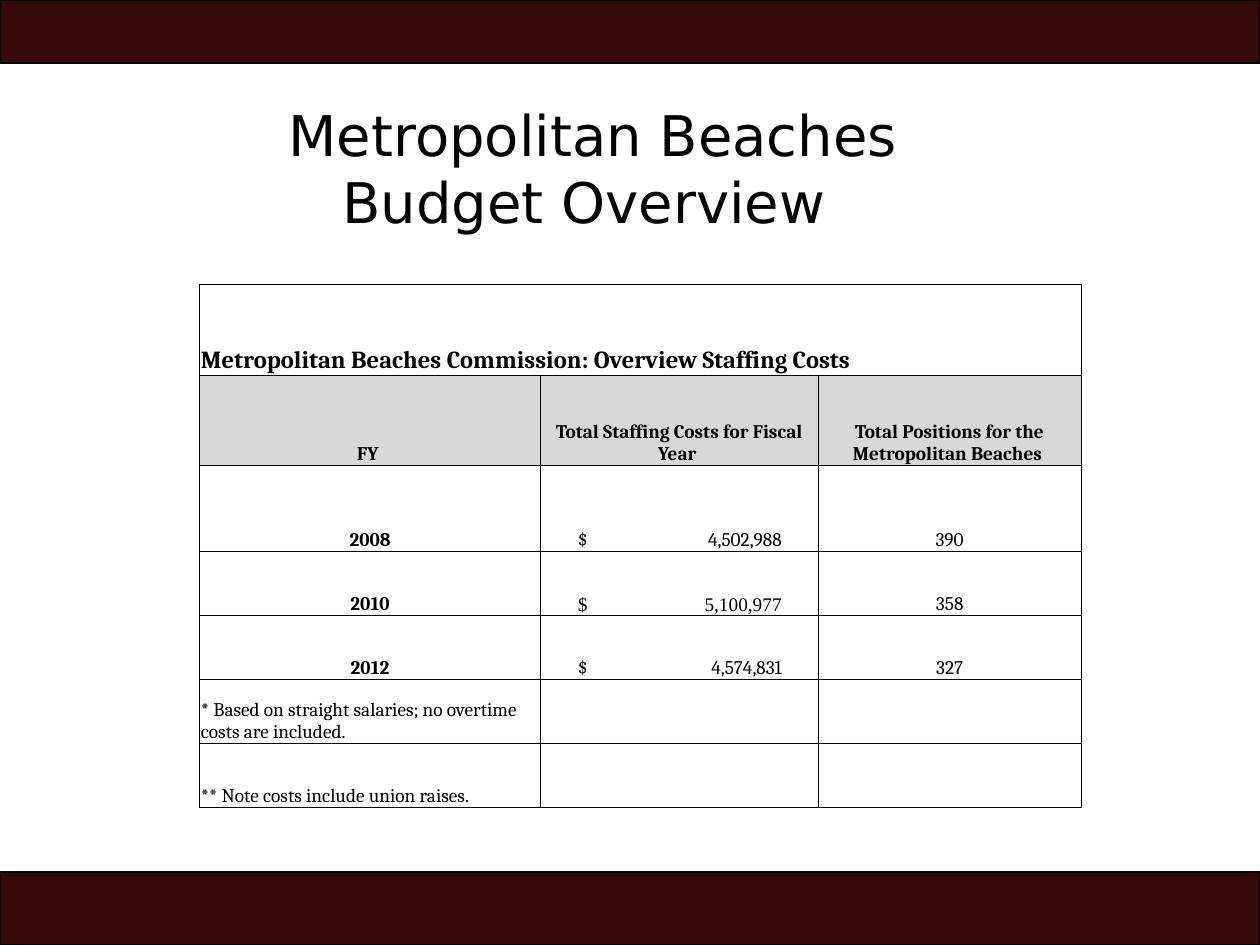
from typing import Any, NamedTuple

import pptx
import pptx.dml.color
import pptx.enum.shapes
import pptx.enum.text
import pptx.oxml
import pptx.oxml.ns
import pptx.util
from pptx.util import Cm

RGBColor = pptx.dml.color.RGBColor
BLACK = RGBColor(0, 0, 0)
WHITE = RGBColor(255, 255, 255)
GREY = RGBColor(0xD8, 0xD8, 0xD8)
MAROON = RGBColor(0x37, 0x0A, 0x0A)
ALIGN = pptx.enum.text.PP_ALIGN
ANCHOR = pptx.enum.text.MSO_ANCHOR
SIDES = ("L", "R", "T", "B")
SERIF = "Cambria"


class Bar(NamedTuple):
    top: float
    height: float


class Item(NamedTuple):
    text: str = ""
    align: Any = ALIGN.CENTER
    bold: bool = False
    size: float = 11
    font: str = SERIF
    tabs: tuple = ()


def money(text: str, font: str = SERIF) -> Item:
    """Dollar sign at a left tab, amount against a right tab."""
    return Item(f"\t$\t{text}", ALIGN.LEFT, font=font, tabs=(("l", 0.72), ("r", 4.83)))


def head(text: str) -> Item:
    return Item(text, bold=True)


def year(text: str, cost: Item, staff: str) -> list[Item]:
    return [head(text), cost, Item(staff)]


def note(text: str) -> list[Item]:
    return [Item(text, ALIGN.LEFT), Item(), Item()]


BARS = [Bar(0, 1.27), Bar(17.58, 1.47)]
COLS = [6.88, 5.59, 5.31]
ROWS = [1.29, 1.82, 1.82, 1.74] + [1.29] * 4
CELLS = [
    [Item()],
    [Item("Metropolitan Beaches Commission: Overview Staffing Costs", ALIGN.LEFT, True, 14)],
    [
        head("FY "),
        head("Total Staffing Costs for Fiscal Year "),
        head("Total Positions for the Metropolitan Beaches "),
    ],
    year("2008", money("4,502,988"), "390"),
    year("2010", money("5,100,977", "Times New Roman"), "358"),
    year("2012", money("4,574,831"), "327"),
    note("* Based on straight salaries; no overtime costs are included."),
    note("** Note costs include union raises."),
]


def style(obj: Any, form: dict[str, Any]) -> None:
    for key, value in form.items():
        setattr(obj, key, value)


def write(para: Any, item: Item) -> None:
    if item.tabs:
        props = para._p.get_or_add_pPr()
        stops = pptx.oxml.ns.qn("a:tabLst")
        stops = props.makeelement(stops, {})
        props.append(stops)
        for side, place in item.tabs:
            stop = {"pos": str(Cm(place)), "algn": side}
            stops.append(stops.makeelement(pptx.oxml.ns.qn("a:tab"), stop))
    para.alignment = item.align
    if item.text:
        run = para.add_run()
        run.text = item.text
        form = {"name": item.font, "size": pptx.util.Pt(item.size), "bold": item.bold}
        style(run.font, form)
        run.font.color.rgb = BLACK


def border(cell: Any, shown: tuple[str, ...]) -> None:
    """Draw the named sides and clear the others."""
    props = cell._tc.get_or_add_tcPr()
    for side in SIDES:
        paint = (
            f'<a:solidFill><a:srgbClr val="{BLACK}"/></a:solidFill>'
            if side in shown
            else "<a:noFill/>"
        )
        props.append(
            pptx.oxml.parse_xml(
                f'<a:ln{side} {pptx.oxml.ns.nsdecls("a")} w="{pptx.util.Pt(0.5)}">{paint}</a:ln{side}>'
            )
        )


def band(slide: Any, bar: Bar) -> None:
    kind = pptx.enum.shapes.MSO_SHAPE.RECTANGLE
    shape = slide.shapes.add_shape(kind, 0, Cm(bar.top), Cm(25.4), Cm(bar.height))
    shape.shadow.inherit = False
    shape.fill.solid()
    shape.fill.fore_color.rgb = MAROON
    shape.line.color.rgb = BLACK
    shape.line.width = pptx.util.Pt(0.75)


def title(slide: Any) -> None:
    box = slide.shapes.add_textbox(Cm(3.38), Cm(1.9), Cm(17.15), Cm(3))
    form = {"word_wrap": True, "auto_size": pptx.enum.text.MSO_AUTO_SIZE.SHAPE_TO_FIT_TEXT}
    style(box.text_frame, form)
    item = Item("Metropolitan Beaches Budget Overview ", size=32, font="DejaVu Sans")
    write(box.text_frame.paragraphs[0], item)


def costs(slide: Any) -> None:
    frame = slide.shapes.add_table(
        len(ROWS), len(COLS), Cm(4.02), Cm(4.45), Cm(sum(COLS)), Cm(sum(ROWS))
    )
    table = frame.table
    style(table, {"first_row": False, "horz_banding": False})
    for col, width in zip(table.columns, COLS):
        col.width = Cm(width)
    inset = Cm(0.03)
    form = {
        "vertical_anchor": ANCHOR.BOTTOM,
        "margin_left": inset,
        "margin_right": inset,
        "margin_top": inset,
        "margin_bottom": 0,
    }
    for i, (height, items) in enumerate(zip(ROWS, CELLS)):
        table.rows[i].height = Cm(height)
        if len(items) == 1:
            table.cell(i, 0).merge(table.cell(i, len(COLS) - 1))
        for j in range(len(COLS)):
            cell = table.cell(i, j)
            border(cell, SIDES if i else ("B",))
            cell.fill.solid()
            cell.fill.fore_color.rgb = GREY if i == 2 else WHITE
            style(cell, form)
        for j, item in enumerate(items):
            write(table.cell(i, j).text_frame.paragraphs[0], item)


def main() -> None:
    deck = pptx.Presentation()
    style(deck, {"slide_width": Cm(25.4), "slide_height": Cm(19.05)})
    slide = deck.slides.add_slide(deck.slide_layouts[6])
    for bar in BARS:
        band(slide, bar)
    costs(slide)
    title(slide)
    deck.save("out.pptx")


if __name__ == "__main__":
    main()
